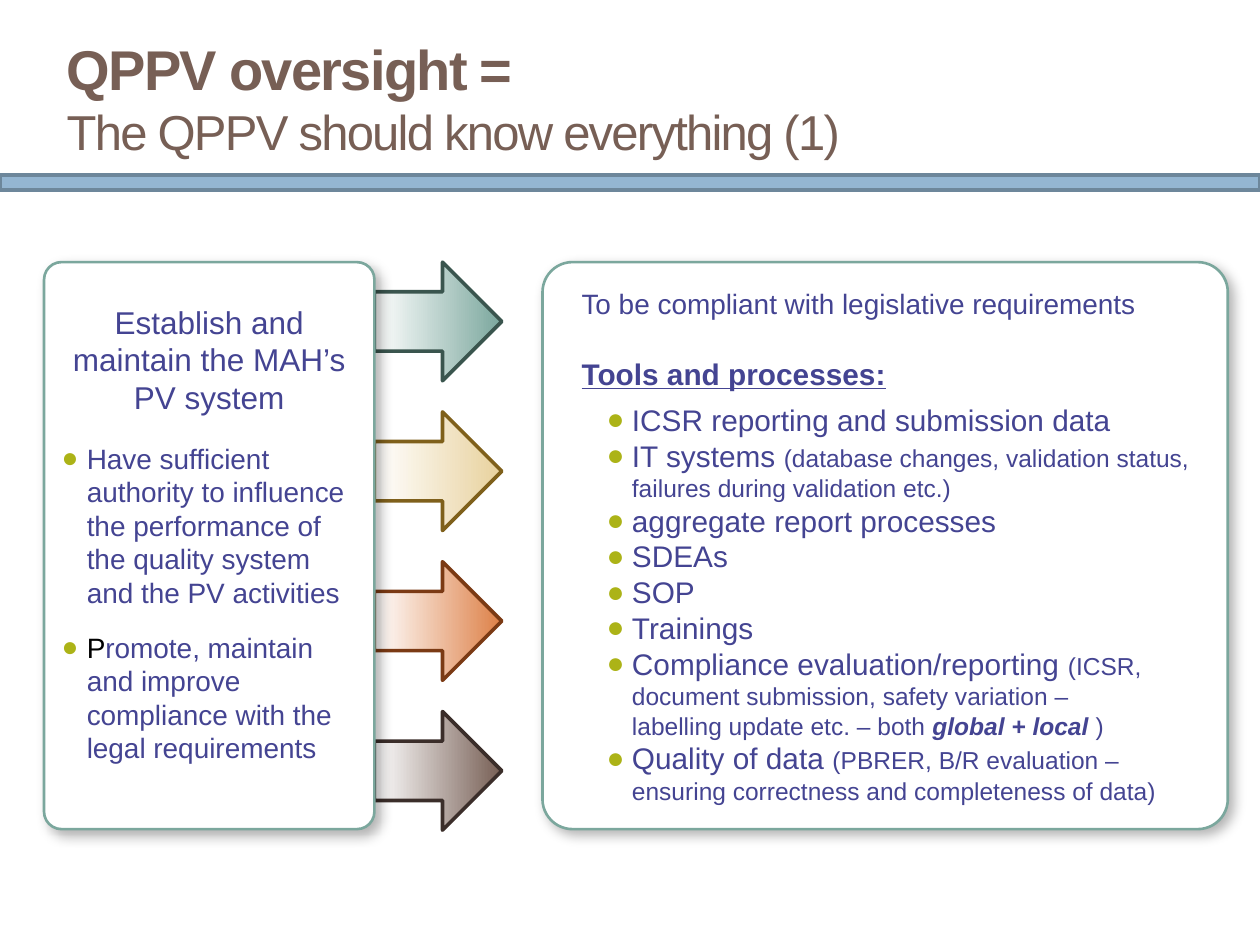
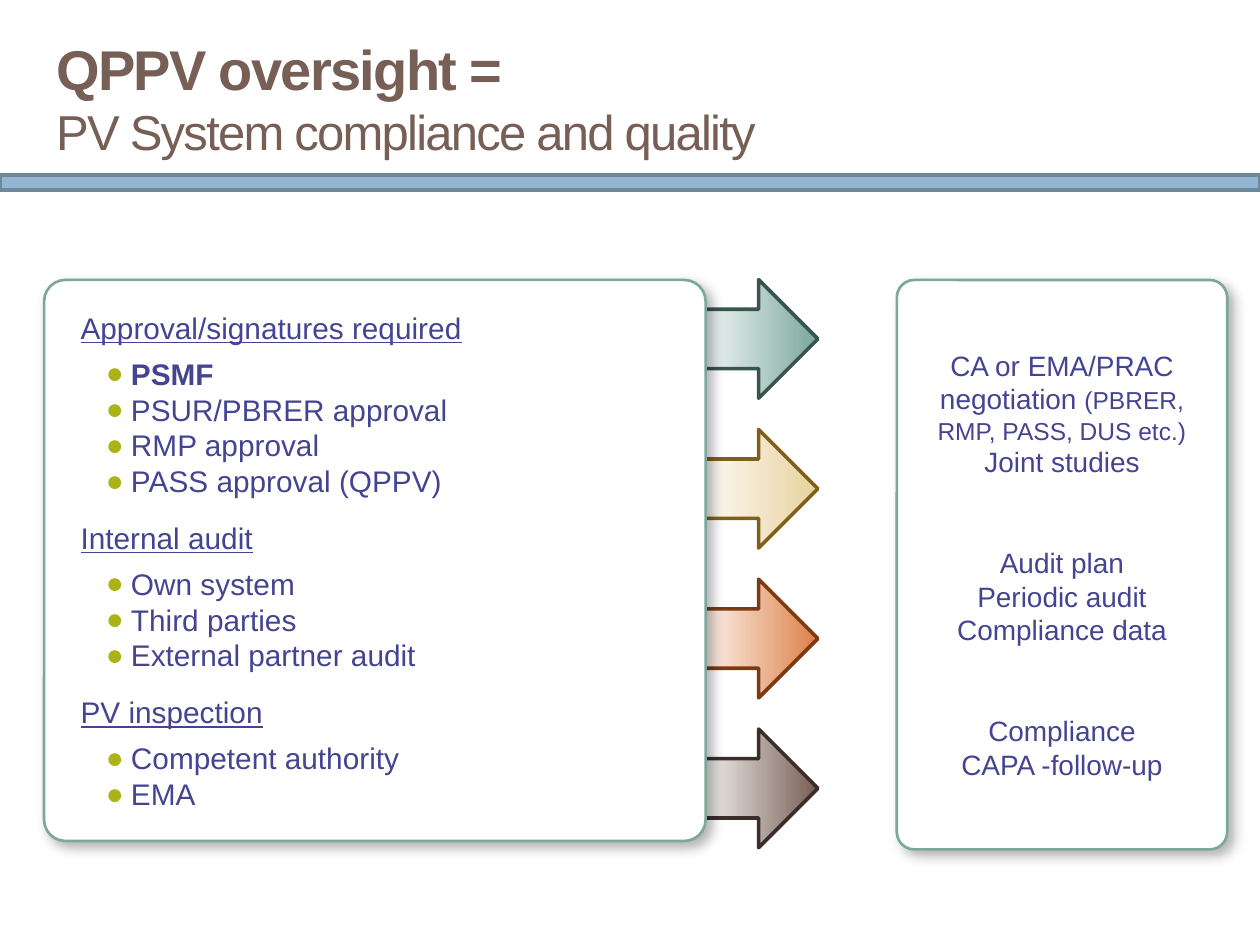
"""Builds two slides on QPPV oversight: titled pages with two panels joined by arrows."""
from lxml import etree
from pptx import Presentation
from pptx.dml.color import RGBColor
from pptx.enum import shapes, text
from pptx.oxml import ns
from pptx.util import Pt

FONT = "Arial"
BROWN, INDIGO, TEAL, LIME, WHITE, BLACK = "775F55", "444492", "7BA79D", "ACB317", "FFFFFF", "000000"
BAND, BAND_EDGE = "94B6D2", "6D879B"
ARROWS = [(TEAL, "3A554E"), ("E8D19D", "7F601B"), ("DD8047", "7B3A14"), (BROWN, "3B2E2A")]
ARROW_WIDTH, ARROW_HEIGHT, ARROW_PITCH = 72.8, 67.8, 85.6
LEFT, CENTER = text.PP_ALIGN.LEFT, text.PP_ALIGN.CENTER
TOP, MIDDLE = text.MSO_ANCHOR.TOP, text.MSO_ANCHOR.MIDDLE


def line(*runs, size=17, before=0, indent=0, align=LEFT):
    """Describe a paragraph; a run is a string or (string, overrides)."""
    return dict(runs=runs, size=size, before=before, indent=indent, align=align)


def bullets(*items, indent=28.8, first_gap=6):
    """Describe a bullet list, with a gap above its first item."""
    return [line(*(item if isinstance(item, list) else [item]), indent=indent,
                 before=0 if index else first_gap) for index, item in enumerate(items)]


def detailed(lead, *details):
    """Describe a 17 pt lead followed by 14 pt details."""
    return line((lead, dict(size=17)), *details, size=14, indent=28.8)


def heading(words, before=0):
    """Describe an underlined heading."""
    return line((words, dict(underline=True)), before=before)


def centered(*words, before=0):
    """Describe centred 16 pt lines, with a gap above the first."""
    return [line(word, size=16, align=CENTER, before=0 if index else before)
            for index, word in enumerate(words)]


DUTIES = [
    line("Establish and maintain the MAH’s PV system", size=18, align=CENTER),
    line("Have sufficient authority to influence the performance of the quality system "
         "and the PV activities", size=16, before=14.4, indent=14.4),
    line(("P", dict(color=BLACK)), "romote, maintain and improve compliance with the legal requirements",
         size=16, before=12, indent=14.4),
]
TOOLS = [
    line("To be compliant with legislative requirements", size=16),
    line(("Tools and processes:", dict(bold=True, underline=True)), before=20.4),
    *bullets("ICSR reporting and submission data"),
    detailed("IT systems ", "(database changes, validation status, failures during validation etc.)"),
    *bullets("aggregate report processes", "SDEAs", "SOP", "Trainings", first_gap=0),
    detailed("Compliance evaluation/reporting ",
             "(ICSR, document submission, safety variation –\nlabelling update etc. – both ",
             ("global + local ", dict(bold=True, italic=True)), ")"),
    detailed("Quality of data ", "(PBRER, B/R evaluation –\nensuring correctness and completeness of data)"),
]
APPROVALS = [
    heading("Approval/signatures required"),
    *bullets([("PSMF", dict(bold=True))], "PSUR/PBRER approval", "RMP approval", "PASS approval (QPPV)"),
    heading("Internal audit", before=12),
    *bullets("Own system", "Third parties", "External partner audit"),
    heading("PV inspection", before=12),
    *bullets("Competent authority", "EMA"),
]
OUTCOMES = [
    line("CA or EMA/PRAC negotiation ", ("(PBRER, RMP, PASS, DUS etc.)", dict(size=14)),
         size=16, align=CENTER),
    *centered("Joint studies"),
    *centered("Audit plan", "Periodic audit", "Compliance data", before=38.4),
    *centered("Compliance", "CAPA -follow-up", before=38.4),
]
SLIDES = [
    dict(subtitle="The QPPV should know everything (1)", title_box=(31, 23, 663, 65.5),
         arrows_at=(214, 149.8), panels=[
             dict(box=(25.2, 149.8, 188.8, 324), corner=0.053, anchor=TOP,
                  insets=(7.2, 20.2, 7.2, 3.6), lines=DUTIES),
             dict(box=(310, 149.8, 391.6, 324), corner=0.053, anchor=MIDDLE,
                  insets=(17.3, 3.6, 7.2, 3.6), lines=TOOLS)]),
    dict(subtitle="PV System compliance and quality", title_box=(25, 23, 578, 65.5),
         arrows_at=(394.6, 159.8), panels=[
             dict(box=(25.2, 160, 378, 320.6), corner=0.038, anchor=MIDDLE,
                  insets=(17.3, 3.6, 7.2, 3.6), lines=APPROVALS),
             dict(box=(512.5, 160, 188.8, 325.4), corner=0.053, anchor=MIDDLE,
                  insets=(5.8, 0, 5.8, 0), lines=OUTCOMES)]),
]


def rgb(value):
    """Turn a hex string into a colour."""
    return RGBColor.from_string(value)


def add_element(parent, tag, **attributes):
    """Append a DrawingML element."""
    return etree.SubElement(parent, ns.qn("a:" + tag), attributes)


def add_box(slide, preset, box, edge, width, fill=None):
    """Add a preset shape with its outline and optional solid fill."""
    shape = slide.shapes.add_shape(preset, *map(Pt, box))
    shape.shadow.inherit = False
    shape.line.color.rgb = rgb(edge)
    shape.line.width = Pt(width)
    if fill:
        shape.fill.solid()
        shape.fill.fore_color.rgb = rgb(fill)
    return shape


def add_run(paragraph, words, size=None, color=None, bold=None, italic=None, underline=None, spacing=None):
    """Add a run, turning newlines into line breaks."""
    for index, part in enumerate(words.split("\n")):
        if index:
            paragraph.add_line_break()
        run = paragraph.add_run()
        run.text = part
        font = run.font
        font.bold, font.italic, font.underline = bold, italic, underline
        if size:
            font.size = Pt(size)
        if color:
            font.color.rgb = rgb(color)
        if spacing:
            run._r.get_or_add_rPr().set("spc", str(spacing))


def write_lines(frame, lines, color):
    """Write the described paragraphs into a text frame."""
    frame.word_wrap = True
    for index, item in enumerate(lines):
        paragraph = frame.paragraphs[0] if index == 0 else frame.add_paragraph()
        paragraph.alignment = item["align"]
        if item["before"]:
            paragraph.space_before = Pt(item["before"])
        if item["indent"]:
            properties = paragraph._p.get_or_add_pPr()
            properties.set("marL", str(Pt(item["indent"])))
            properties.set("indent", str(-Pt(14.4)))
            add_element(add_element(properties, "buClr"), "srgbClr", val=LIME)
            add_element(properties, "buFont", typeface=FONT)
            add_element(properties, "buChar", char="●")
        font = paragraph.font
        font.name, font.size, font.color.rgb = FONT, Pt(item["size"]), rgb(color)
        for run in item["runs"]:
            words, overrides = (run, {}) if isinstance(run, str) else run
            add_run(paragraph, words, **overrides)


def add_title(slide, box, subtitle):
    """Add the two-line title."""
    frame = slide.shapes.add_textbox(*map(Pt, box)).text_frame
    frame.vertical_anchor = MIDDLE
    write_lines(frame, [line(("QPPV oversight =\n", dict(size=32, bold=True, spacing=-100)),
                             (subtitle, dict(spacing=-100)), size=28)], BROWN)


def add_arrows(slide, left, top):
    """Add the column of fading arrows."""
    for index, (color, edge) in enumerate(ARROWS):
        box = (left, top + index * ARROW_PITCH, ARROW_WIDTH, ARROW_HEIGHT)
        arrow = add_box(slide, shapes.MSO_SHAPE.RIGHT_ARROW, box, edge, 2.08)
        arrow.fill.gradient()
        arrow.fill.gradient_angle = 180
        for stop, shade in zip(arrow.fill.gradient_stops, (color, WHITE)):
            stop.color.rgb = rgb(shade)


def add_panel(slide, box, corner, anchor, insets, lines):
    """Add a rounded panel with a soft shadow and text."""
    panel = add_box(slide, shapes.MSO_SHAPE.ROUNDED_RECTANGLE, box, TEAL, 1.5, WHITE)
    panel.adjustments[0] = corner
    effects = panel._element.spPr.find(ns.qn("a:effectLst"))
    shadow = add_element(effects, "outerShdw", blurRad=str(Pt(7)), dist=str(Pt(4)),
                         dir="2700000", algn="tl", rotWithShape="0")
    add_element(add_element(shadow, "srgbClr", val=BLACK), "alpha", val="30000")
    frame = panel.text_frame
    frame.vertical_anchor = anchor
    frame.margin_left, frame.margin_top, frame.margin_right, frame.margin_bottom = map(Pt, insets)
    write_lines(frame, lines, INDIGO)


def main():
    """Build and save the presentation."""
    presentation = Presentation()
    presentation.slide_width, presentation.slide_height = Pt(720), Pt(540)
    for content in SLIDES:
        slide = presentation.slides.add_slide(presentation.slide_layouts[6])
        add_box(slide, shapes.MSO_SHAPE.RECTANGLE, (0, 100, 720, 8.5), BAND_EDGE, 2.08, BAND)
        add_arrows(slide, *content["arrows_at"])
        for panel in content["panels"]:
            add_panel(slide, **panel)
        add_title(slide, content["title_box"], content["subtitle"])
    presentation.save("out.pptx")


if __name__ == "__main__":
    main()
